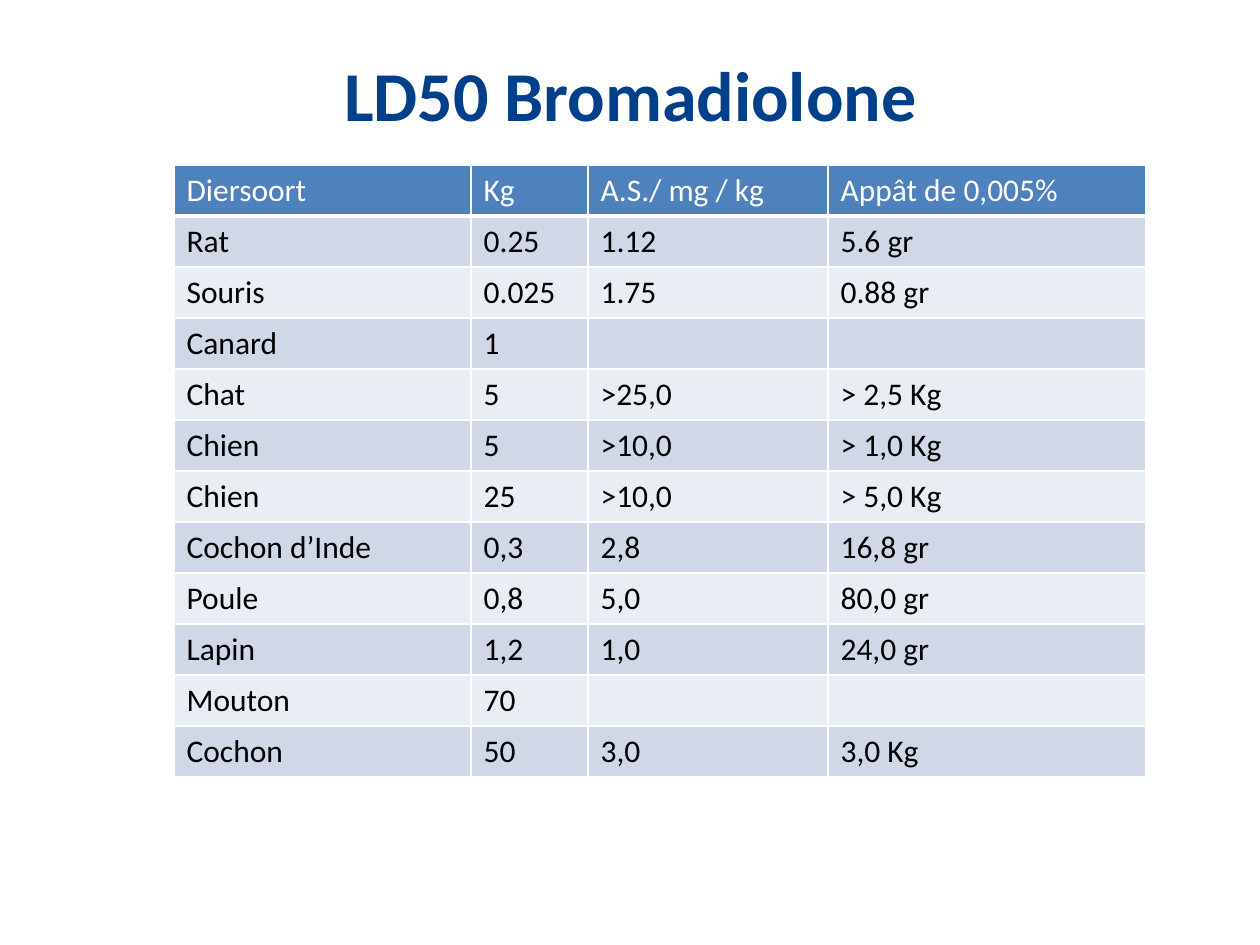
from lxml import etree
from pptx import Presentation
from pptx.dml.color import RGBColor
from pptx.enum.text import MSO_ANCHOR, MSO_AUTO_SIZE, PP_ALIGN
from pptx.oxml.ns import qn
from pptx.util import Pt

PX = 914400 / 126  # EMU per px
CENTER = PP_ALIGN.CENTER
TOP = MSO_ANCHOR.TOP
GROW = MSO_AUTO_SIZE.SHAPE_TO_FIT_TEXT
TITLE_ONLY = 5

COLORS = {
    "title": "003F8A",
    "header": "4F81BD",
    "odd": "D0D8E8",
    "even": "E9EDF4",
    "white": "FFFFFF",
    "black": "000000",
}
COLUMN_WIDTHS = [297, 117, 240, 318]
ROW_HEIGHT = 51
ROWS = [
    ["Diersoort", "Kg", "A.S./ mg / kg", "Appât de 0,005%"],
    ["Rat", "0.25", "1.12", "5.6 gr"],
    ["Souris", "0.025", "1.75", "0.88 gr"],
    ["Canard", "1", "", ""],
    ["Chat", "5", ">25,0", "> 2,5 Kg"],
    ["Chien", "5", ">10,0", "> 1,0 Kg"],
    ["Chien", "25", ">10,0", "> 5,0 Kg"],
    ["Cochon d’Inde", "0,3", "2,8", "16,8 gr"],
    ["Poule", "0,8", "5,0", "80,0 gr"],
    ["Lapin", "1,2", "1,0", "24,0 gr"],
    ["Mouton", "70", "", ""],
    ["Cochon", "50", "3,0", "3,0 Kg"],
]


def px(length):
    return round(length * PX)


def write(para, text, size, color, bold):
    span = para.add_run()
    span.text = text
    formats = {"name": "Calibri", "size": Pt(size), "bold": bold}
    for name, value in formats.items():
        setattr(span.font, name, value)
    span.font.color.rgb = RGBColor.from_string(COLORS[color])


deck = Presentation()
deck.slide_width, deck.slide_height = px(1260), px(945)
page = deck.slides.add_slide(deck.slide_layouts[TITLE_ONLY])

# Title
title = page.shapes.title
title.left, title.top, title.width, title.height = map(px, (29, 45, 1203, 97))
frame = title.text_frame
for name, value in {"word_wrap": True, "auto_size": GROW, "vertical_anchor": TOP}.items():
    setattr(frame, name, value)
frame.paragraphs[0].alignment = CENTER
write(frame.paragraphs[0], "LD50 Bromadiolone", 40, "title", True)

# Table grid
table = page.shapes.add_table(
    len(ROWS), len(COLUMN_WIDTHS), px(174), px(165),
    px(sum(COLUMN_WIDTHS)), px(ROW_HEIGHT * len(ROWS)),
).table
for column, width in zip(table.columns, COLUMN_WIDTHS):
    column.width = px(width)
for row in table.rows:
    row.height = px(ROW_HEIGHT)

# Cells: text, white borders and banded fill
for row_index, values in enumerate(ROWS):
    is_header = row_index == 0
    band = "header" if is_header else "odd" if row_index % 2 else "even"
    for column_index, text in enumerate(values):
        cell = table.cell(row_index, column_index)
        if text:
            color = "white" if is_header else "black"
            write(cell.text_frame.paragraphs[0], text, 18, color, False)
        properties = cell._tc.get_or_add_tcPr()
        for side in ("lnL", "lnR", "lnT", "lnB"):
            weight = 3 if is_header and side == "lnB" else 1
            line = etree.SubElement(properties, qn("a:" + side), w=str(Pt(weight)))
            fill = etree.SubElement(line, qn("a:solidFill"))
            etree.SubElement(fill, qn("a:srgbClr"), val=COLORS["white"])
        cell.fill.solid()
        cell.fill.fore_color.rgb = RGBColor.from_string(COLORS[band])

deck.save("out.pptx")
